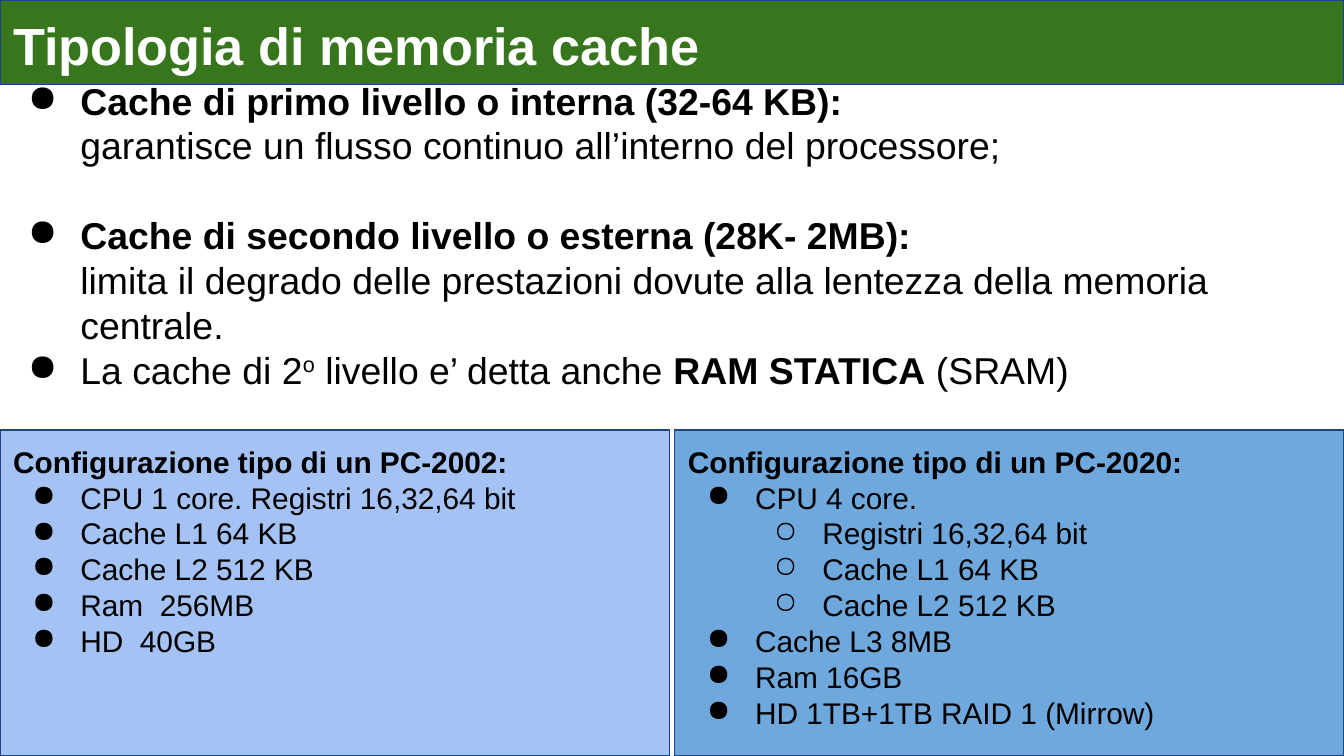
from lxml.etree import SubElement
from pptx import Presentation
from pptx.dml.color import RGBColor
from pptx.enum.shapes import MSO_SHAPE
from pptx.enum.text import MSO_ANCHOR, PP_ALIGN
from pptx.oxml.ns import qn
from pptx.util import Inches, Pt

BLACK = RGBColor(0x00, 0x00, 0x00)
WHITE = RGBColor(0xFF, 0xFF, 0xFF)
GREEN = RGBColor(0x38, 0x76, 0x1D)
NAVY = RGBColor(0x1C, 0x45, 0x87)
PALE_BLUE = RGBColor(0xA4, 0xC2, 0xF4)
MID_BLUE = RGBColor(0x6F, 0xA8, 0xDC)

WIDTH, HEIGHT = Inches(10), Inches(5.625)
TITLE_HEIGHT = Inches(0.63)
PANEL_TOP = Inches(3.2)
PANEL_GAP = Inches(0.04)
PANEL_WIDTH = (WIDTH - PANEL_GAP) // 2

prs = Presentation()
prs.slide_width, prs.slide_height = WIDTH, HEIGHT
slide = prs.slides.add_slide(prs.slide_layouts[6])


def add_band(left, top, width, height, fill):
    """Add an outlined rectangle and return its text frame, set to the top left."""
    band = slide.shapes.add_shape(MSO_SHAPE.RECTANGLE, left, top, width, height)
    band.shadow.inherit = False
    band.fill.solid()
    band.fill.fore_color.rgb = fill
    band.line.color.rgb = NAVY
    band.line.width = Pt(0.75)
    frame = band.text_frame
    frame.word_wrap = True
    frame.vertical_anchor = MSO_ANCHOR.TOP
    frame.margin_left = frame.margin_right = Inches(0.1)
    frame.margin_top = frame.margin_bottom = Inches(0.1)
    return frame


def style(paragraph, size, color=BLACK, bold=False, level=None, hang=0.36):
    """Set font and alignment; a level adds a hanging bullet."""
    paragraph.alignment = PP_ALIGN.LEFT
    if level is not None:
        paragraph.level = level
        props = paragraph._p.get_or_add_pPr()
        props.set("marL", str(Inches(0.5 * (level + 1))))
        props.set("indent", str(-Inches(hang)))
        bullet_color = SubElement(props, qn("a:buClr"))
        SubElement(bullet_color, qn("a:srgbClr"), val=str(BLACK))
        SubElement(props, qn("a:buChar"), char="●○"[level])
    font = paragraph.font
    font.name, font.size, font.bold = "Arial", Pt(size), bold
    font.color.rgb = color


# Cache levels: each piece is (text, bold, baseline shift)
cache_levels = [
    [("Cache di primo livello o interna (32-64 KB):", True, 0), "break",
     ("garantisce un flusso continuo all’interno del processore;", False, 0)],
    [("Cache di secondo livello o esterna (28K- 2MB):", True, 0), "break",
     ("limita il degrado delle prestazioni dovute alla lentezza della memoria centrale.", False, 0)],
    [("La cache di 2", False, 0), ("o", False, 30), (" livello e’ detta anche ", False, 0),
     ("RAM STATICA", True, 0), (" (SRAM)", False, 0)],
]
levels_frame = slide.shapes.add_textbox(0, Inches(0.53), WIDTH, Inches(2.83)).text_frame
levels_frame.word_wrap = True
for index, pieces in enumerate(cache_levels):
    item = levels_frame.add_paragraph() if index else levels_frame.paragraphs[0]
    style(item, 20, level=0, hang=0.39)
    if index == 1:
        item.space_before = Pt(24)
    for piece in pieces:
        if piece == "break":
            item.add_line_break()
            continue
        text, bold, shift = piece
        run = item.add_run()
        run.text = text
        if bold:
            run.font.bold = True
        if shift:
            run.font._element.set("baseline", str(shift * 1000))

# Title bar
title = add_band(0, 0, WIDTH, TITLE_HEIGHT, GREEN).paragraphs[0]
title.text = "Tipologia di memoria cache"
style(title, 28, WHITE, bold=True)

# Typical PC configurations: each part is (level, text)
configurations = [
    ("Configurazione tipo di un PC-2002:", PALE_BLUE,
     [(0, "CPU 1 core. Registri 16,32,64 bit"), (0, "Cache L1 64 KB"),
      (0, "Cache L2 512 KB"), (0, "Ram  256MB"), (0, "HD  40GB")]),
    ("Configurazione tipo di un PC-2020:", MID_BLUE,
     [(0, "CPU 4 core."), (1, "Registri 16,32,64 bit"), (1, "Cache L1 64 KB"),
      (1, "Cache L2 512 KB"), (0, "Cache L3 8MB"), (0, "Ram 16GB"),
      (0, "HD 1TB+1TB RAID 1 (Mirrow)")]),
]
for column, (heading_text, fill, parts) in enumerate(configurations):
    panel = add_band(column * (PANEL_WIDTH + PANEL_GAP), PANEL_TOP,
                     PANEL_WIDTH, HEIGHT - PANEL_TOP, fill)
    heading = panel.paragraphs[0]
    heading.text = heading_text
    style(heading, 16, bold=True)
    for level, part_text in parts:
        part = panel.add_paragraph()
        part.text = part_text
        style(part, 16, level=level)

prs.save("out.pptx")
